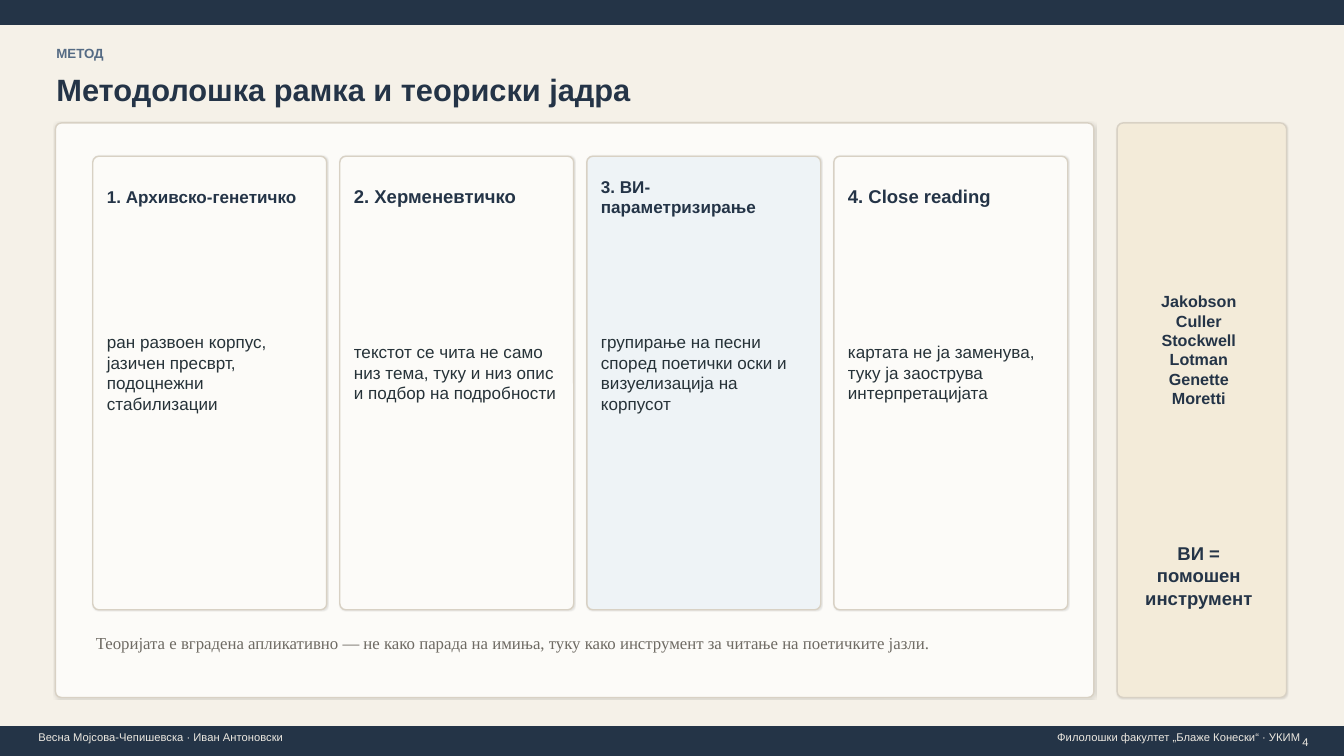
import pptx
import pptx.util
import pptx.dml.color
import pptx.enum.shapes
import pptx.enum.text
import pptx.oxml

THEME = {
    "navy": "243447", "slate": "556B84", "ink": "263238", "muted": "6E6A63",
    "page": "F5F1E8", "paper": "FCFBF8", "sand": "F3EBD9", "mist": "EEF3F6",
    "border": "D8D1C4", "pale": "EDE9E1",
    "sans": "Arial", "serif": "Times New Roman",
    "title": 22, "heading": 13.2, "body": 12.2, "note": 12,
    "names": 11.5, "label": 9.5, "footer": 8,
}
COLUMNS, ROWS = 1333, 750
ALIGN = pptx.enum.text.PP_ALIGN
SHAPES = pptx.enum.shapes.MSO_SHAPE
NO_INSETS = (0, 0)

presentation = pptx.Presentation()
presentation.slide_width = pptx.util.Inches(13.33)
presentation.slide_height = pptx.util.Inches(7.5)
column = presentation.slide_width / COLUMNS
row = presentation.slide_height / ROWS
slide = presentation.slides.add_slide(presentation.slide_layouts[6])
slide.background.fill.solid()
slide.background.fill.fore_color.rgb = pptx.dml.color.RGBColor.from_string(THEME["page"])


def add_panel(left, top, width, height, fill, border, radius=0):
    kind = SHAPES.ROUNDED_RECTANGLE if radius else SHAPES.RECTANGLE
    shape = slide.shapes.add_shape(
        kind, round(left * column), round(top * row), round(width * column), round(height * row))
    shape.shadow.inherit = False
    for paint, color in ((shape.fill, fill), (shape.line.fill, border)):
        paint.solid()
        paint.fore_color.rgb = pptx.dml.color.RGBColor.from_string(THEME[color])
    shape.line.width = pptx.util.Pt(1)
    if radius:
        shape.adjustments[0] = radius / min(width, height)
        effects = shape._element.spPr.find(pptx.oxml.ns.qn("a:effectLst"))
        effects.append(pptx.oxml.parse_xml(
            f'<a:outerShdw {pptx.oxml.ns.nsdecls("a")} blurRad="10160" dist="3810" '
            'dir="2700000" algn="ctr" rotWithShape="0"><a:srgbClr val="000000">'
            '<a:alpha val="10000"/></a:srgbClr></a:outerShdw>'))


def add_text(left, top, width, height, lines, size, color, bold=False,
             font="sans", align=ALIGN.LEFT, insets=NO_INSETS,
             anchor=pptx.enum.text.MSO_ANCHOR.MIDDLE):
    shape = slide.shapes.add_textbox(
        round(left * column), round(top * row), round(width * column), round(height * row))
    across, down = round(insets[0] * column), round(insets[1] * row)
    frame_format = {
        "word_wrap": True, "vertical_anchor": anchor,
        "margin_left": across, "margin_right": across,
        "margin_top": down, "margin_bottom": down,
    }
    for name, value in frame_format.items():
        setattr(shape.text_frame, name, value)
    shape.text_frame.text = "\n".join(lines)
    font_format = {"name": THEME[font], "size": pptx.util.Pt(THEME[size]), "bold": bold}
    for paragraph in shape.text_frame.paragraphs:
        paragraph.alignment = align
        run_font = paragraph.runs[0].font
        for name, value in font_format.items():
            setattr(run_font, name, value)
        run_font.color.rgb = pptx.dml.color.RGBColor.from_string(THEME[color])


for top, height in ((0, 24), (721, 29)):
    add_panel(0, top, COLUMNS, height, "navy", "navy")
add_text(38, 725, 620, 12, ["Весна Мојсова-Чепишевска · Иван Антоновски"], "footer", "pale")
add_text(810, 725, 480, 12, ["Филолошки факултет „Блаже Конески“ · УКИМ"],
         "footer", "pale", align=ALIGN.RIGHT)

add_text(56, 44, 270, 18, ["МЕТОД"], "label", "slate", bold=True)
add_text(56, 66, 900, 45, ["Методолошка рамка и теориски јадра"], "title", "navy", bold=True)

for left, width, fill in ((55, 1030, "paper"), (1108, 168, "sand")):
    add_panel(left, 122, width, 570, fill, "border", radius=6)

methods = (
    ("1. Архивско-генетичко", "body", "paper",
     "ран развоен корпус, јазичен пресврт, подоцнежни стабилизации"),
    ("2. Херменевтичко", "heading", "paper",
     "текстот се чита не само низ тема, туку и низ опис и подбор на подробности"),
    ("3. ВИ-параметризирање", "body", "mist",
     "групирање на песни според поетички оски и визуелизација на корпусот"),
    ("4. Close reading", "heading", "paper",
     "картата не ја заменува, туку ја заострува интерпретацијата"),
)
card_width, card_gap, card_padding = 232, 13, 14
for index, (heading, heading_size, fill, description) in enumerate(methods):
    left = 92 + index * (card_width + card_gap)
    add_panel(left, 155, card_width, 450, fill, "border", radius=6)
    add_text(left + card_padding, 180, 202, 30, [heading], heading_size, "navy", bold=True)
    add_text(left + card_padding, 222, 202, 295, [description], "body", "ink")

add_text(95, 624, 955, 28,
         ["Теоријата е вградена апликативно — не како парада на имиња, "
          "туку како инструмент за читање на поетичките јазли."],
         "note", "muted", font="serif")

theorists = ["Jakobson", "Culler", "Stockwell", "Lotman", "Genette", "Moretti"]
add_text(1118, 192, 142, 310, theorists, "names", "navy", bold=True, align=ALIGN.CENTER)
add_text(1121, 528, 136, 86, ["ВИ =", "помошен", "инструмент"],
         "heading", "navy", bold=True, align=ALIGN.CENTER)
add_text(1282, 725, 20, 12, ["4"], "footer", "pale", align=ALIGN.RIGHT,
         insets=(10, 5), anchor=pptx.enum.text.MSO_ANCHOR.TOP)

presentation.save("out.pptx")
